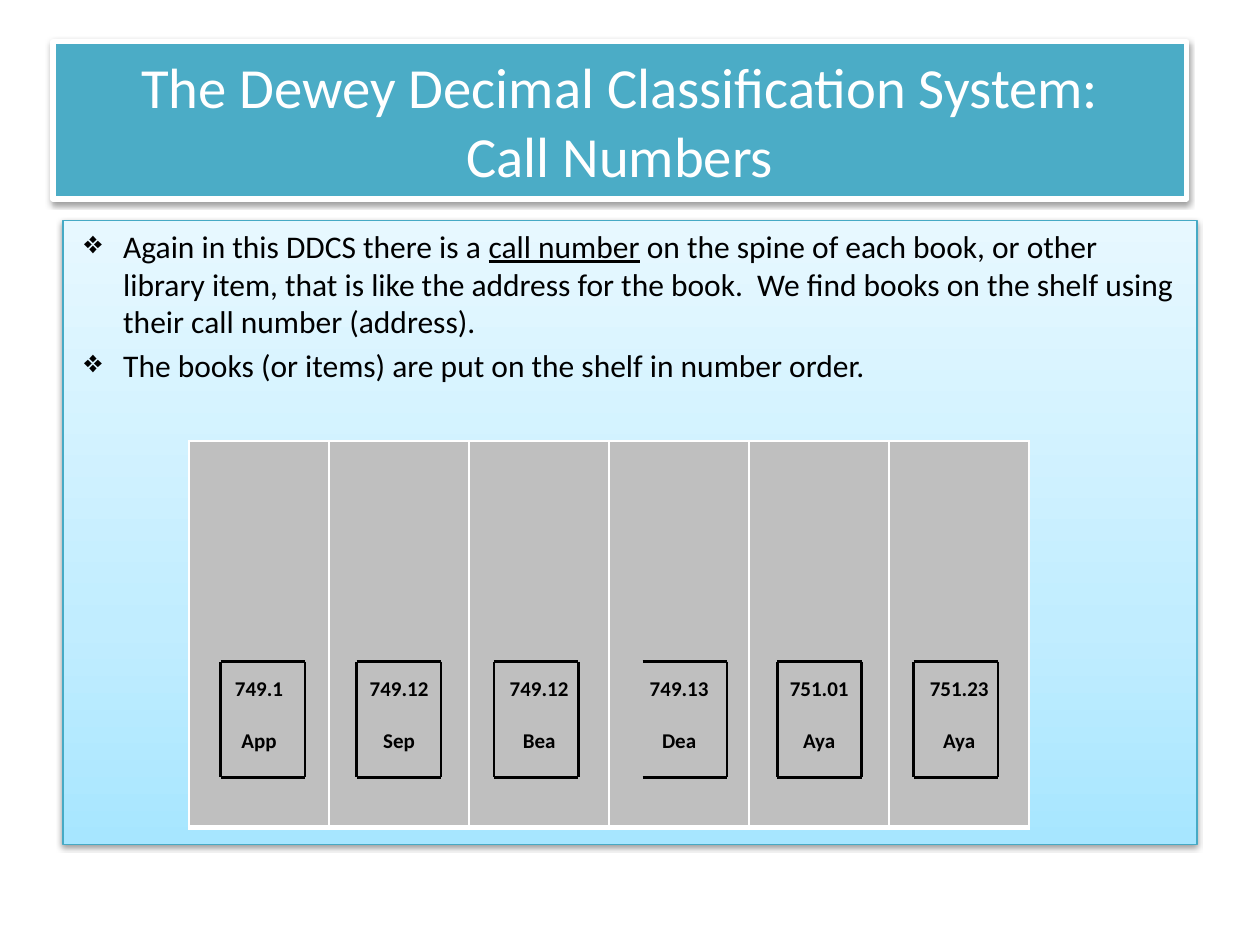
from lxml.etree import SubElement
from pptx import Presentation
from pptx.dml.color import RGBColor
from pptx.enum.shapes import MSO_CONNECTOR, MSO_SHAPE
from pptx.enum.text import MSO_ANCHOR, PP_ALIGN
from pptx.oxml import parse_xml
from pptx.oxml.ns import nsdecls, qn
from pptx.util import Inches, Pt

COLORS = {
    "title": "4BACC6", "panel_line": "46AAC5", "spine": "BFBFBF",
    "white": "FFFFFF", "black": "000000",
    "panel_low": "A7E6FF", "panel_mid": "C1EDFF", "panel_high": "E7F8FF",
}
FONT = "Calibri"
PANEL_STOPS = [(0, "panel_low"), (35, "panel_mid"), (100, "panel_high")]

# Shelf grid: one column for each book
SHELF_LEFT, SHELF_TOP, SHELF_HEIGHT = 1.5, 3.5, 3.07
COL_WIDTH = 6.67 / 6
LABEL_TOP, LABEL_WIDTH, LABEL_HEIGHT = 5.25, 0.67, 0.92

# Call number, author letters, left edge of the label, sides drawn
BOOKS = [
    ("749.1", "App", 1.75, "LTRB"),
    ("749.12", "Sep", 2.83, "LTRB"),
    ("749.12", "Bea", 3.92, "LTRB"),
    ("749.13", "Dea", 5.1, "TRB"),
    ("751.01", "Aya", 6.17, "LTRB"),
    ("751.23", "Aya", 7.25, "LTRB"),
]


def rgb(name):
    return RGBColor.from_string(COLORS[name])


def add_text(p, text, size=18, color="black", bold=False, underline=False):
    """Add text to a paragraph; a newline becomes a line break."""
    for i, line in enumerate(text.split("\n")):
        if i:
            p.add_line_break()
        r = p.add_run()
        r.text = line
        r.font.name, r.font.size = FONT, Pt(size)
        r.font.bold, r.font.underline = bold, underline
        r.font.color.rgb = rgb(color)


def add_box(slide, left, top, width, height, line, line_width):
    """Add a rectangle with a soft shadow below it."""
    sp = slide.shapes.add_shape(MSO_SHAPE.RECTANGLE, Inches(left), Inches(top),
                                Inches(width), Inches(height))
    sp.line.color.rgb = rgb(line)
    sp.line.width = Pt(line_width)
    sp.shadow.inherit = False
    effects = sp._element.spPr.find(qn("a:effectLst"))
    effects.append(parse_xml(
        f'<a:outerShdw {nsdecls("a")} blurRad="{Pt(3.1)}" dist="{Pt(1.6)}" '
        f'dir="5400000" rotWithShape="0"><a:srgbClr val="{COLORS["black"]}">'
        '<a:alpha val="38000"/></a:srgbClr></a:outerShdw>'))
    sp.text_frame.word_wrap = True
    return sp


def fill_gradient(sp, stops):
    """Fill a shape with a gradient that rises from the bottom edge."""
    sp.fill.gradient()
    sp.fill.gradient_angle = 90
    gs_list = sp._element.spPr.find(qn("a:gradFill")).find(qn("a:gsLst"))
    for gs in list(gs_list):
        gs_list.remove(gs)
    for position, color in stops:
        gs = SubElement(gs_list, qn("a:gs"), pos=str(position * 1000))
        SubElement(gs, qn("a:srgbClr"), val=COLORS[color])


def add_title(slide):
    sp = add_box(slide, 0.42, 0.33, 9, 1.25, "white", 3)
    sp.fill.solid()
    sp.fill.fore_color.rgb = rgb("title")
    tf = sp.text_frame
    tf.vertical_anchor = MSO_ANCHOR.MIDDLE
    p = tf.paragraphs[0]
    p.alignment = PP_ALIGN.CENTER
    add_text(p, "The Dewey Decimal Classification System:\nCall Numbers",
             size=32.4, color="white")


def add_bullet(p):
    p.alignment = PP_ALIGN.LEFT
    p.space_before = Pt(3.6)
    pPr = p._p.get_or_add_pPr()
    pPr.set("marL", str(Inches(0.38)))
    pPr.set("indent", str(Inches(-0.31)))
    SubElement(pPr, qn("a:buChar"), char="❖")


def add_panel(slide):
    sp = add_box(slide, 0.5, 1.75, 9, 4.95, "panel_line", 0.75)
    fill_gradient(sp, PANEL_STOPS)
    tf = sp.text_frame
    tf.vertical_anchor = MSO_ANCHOR.TOP
    p = tf.paragraphs[0]
    add_bullet(p)
    add_text(p, "Again in this DDCS there is a ")
    add_text(p, "call number", underline=True)
    add_text(p, " on the spine of each book, or other library item, that is "
                "like the address for the book.  We find books on the shelf "
                "using their call number (address).")
    p = tf.add_paragraph()
    add_bullet(p)
    add_text(p, "The books (or items) are put on the shelf in number order.")


def set_borders(cell):
    """White cell borders, thicker at the bottom; they precede the fill."""
    tcPr = cell._tc.get_or_add_tcPr()
    for i, (side, width) in enumerate(zip("LRTB", (1, 1, 1, 3))):
        tcPr.insert(i, parse_xml(
            f'<a:ln{side} {nsdecls("a")} w="{Pt(width)}"><a:solidFill>'
            f'<a:srgbClr val="{COLORS["white"]}"/></a:solidFill></a:ln{side}>'))


def add_shelf(slide):
    table = slide.shapes.add_table(
        1, len(BOOKS), Inches(SHELF_LEFT), Inches(SHELF_TOP),
        Inches(COL_WIDTH * len(BOOKS)), Inches(SHELF_HEIGHT)).table
    table.first_row = table.horz_banding = False
    for cell, (number, author, *_) in zip(table.rows[0].cells, BOOKS):
        cell.fill.solid()
        cell.fill.fore_color.rgb = rgb("spine")
        set_borders(cell)
        cell.margin_top = Inches(1.87)
        tf = cell.text_frame
        for p, text in ((tf.paragraphs[0], number), (tf.add_paragraph(), author)):
            p.alignment = PP_ALIGN.CENTER
            add_text(p, text, size=12, bold=True)
        p.space_before = Pt(15)


def add_line(slide, x1, y1, x2, y2):
    cx = slide.shapes.add_connector(MSO_CONNECTOR.STRAIGHT, Inches(x1),
                                    Inches(y1), Inches(x2), Inches(y2))
    cx.line.color.rgb = rgb("black")
    cx.line.width = Pt(1.5)
    SubElement(cx._element.spPr, qn("a:effectLst"))


def add_label(slide, left, sides):
    """Outline a spine label with one line for each named side."""
    right, bottom = left + LABEL_WIDTH, LABEL_TOP + LABEL_HEIGHT
    ends = {
        "L": (left, LABEL_TOP, left, bottom),
        "T": (left, LABEL_TOP, right, LABEL_TOP),
        "R": (right, LABEL_TOP, right, bottom),
        "B": (left, bottom, right, bottom),
    }
    for side in sides:
        add_line(slide, *ends[side])


def main():
    prs = Presentation()
    prs.slide_width, prs.slide_height = Inches(10), Inches(7.5)
    slide = prs.slides.add_slide(prs.slide_layouts[6])
    # Heading and explanation
    add_title(slide)
    add_panel(slide)
    # Books on the shelf with their labels
    add_shelf(slide)
    for _, _, left, sides in BOOKS:
        add_label(slide, left, sides)
    prs.save("out.pptx")


if __name__ == "__main__":
    main()
